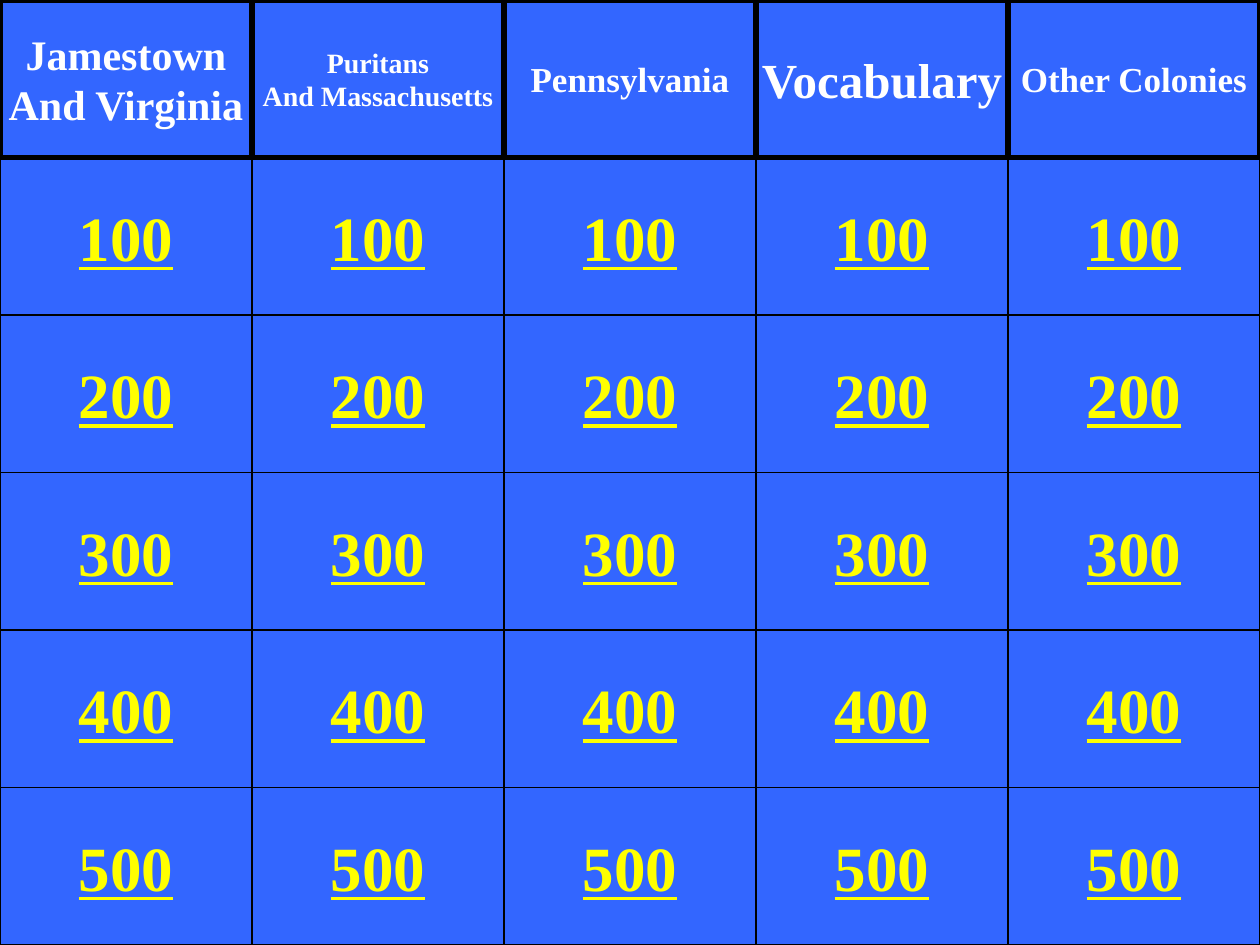
import pptx
import pptx.util
import pptx.dml.color
import pptx.enum.shapes
import pptx.enum.text

SHAPE = pptx.enum.shapes.MSO_SHAPE
BLUE, BLACK, WHITE, YELLOW = "3366FF", "000000", "FFFFFF", "FFFF00"


def paint(fill, color):
    fill.solid()
    fill.fore_color.rgb = pptx.dml.color.RGBColor.from_string(color)


def write(sp, text, size, color, underline=None):
    tf = sp.text_frame
    tf.word_wrap = False
    tf.vertical_anchor = pptx.enum.text.MSO_ANCHOR.MIDDLE
    for i, line in enumerate(text.split("\n")):
        p = tf.add_paragraph() if i else tf.paragraphs[0]
        p.alignment = pptx.enum.text.PP_ALIGN.CENTER
        r = p.add_run()
        r.text = line
        r.font.name = "Times New Roman"
        r.font.size = pptx.util.Pt(size)
        r.font.bold = True
        r.font.underline = underline
        paint(r.font.fill, color)


prs = pptx.Presentation()
prs.slide_width = pptx.util.Inches(10)
prs.slide_height = pptx.util.Inches(7.5)
s = prs.slides.add_slide(prs.slide_layouts[6])
paint(s.background.fill, BLUE)

categories = [
    ("Jamestown\nAnd Virginia", 24),
    ("Puritans\nAnd Massachusetts", 16),
    ("Pennsylvania", 20),
    ("Vocabulary", 28),
    ("Other Colonies", 20),
]
points = [100, 200, 300, 400, 500]
col_w = prs.slide_width // len(categories)
row_h = prs.slide_height // (len(points) + 1)

cells = [
    (col, row, SHAPE.ACTION_BUTTON_CUSTOM, 0.75, str(value), 36, YELLOW, True)
    for col in range(len(categories))
    for row, value in enumerate(points, 1)
]
cells += [
    (col, 0, SHAPE.RECTANGLE, 3, title, size, WHITE, None)
    for col, (title, size) in enumerate(categories)
]

for col, row, kind, line_w, text, size, color, underline in cells:
    sp = s.shapes.add_shape(kind, col * col_w, row * row_h, col_w, row_h)
    sp.shadow.inherit = False
    paint(sp.fill, BLUE)
    paint(sp.line.fill, BLACK)
    sp.line.width = pptx.util.Pt(line_w)
    write(sp, text, size, color, underline=underline)

prs.save("out.pptx")
